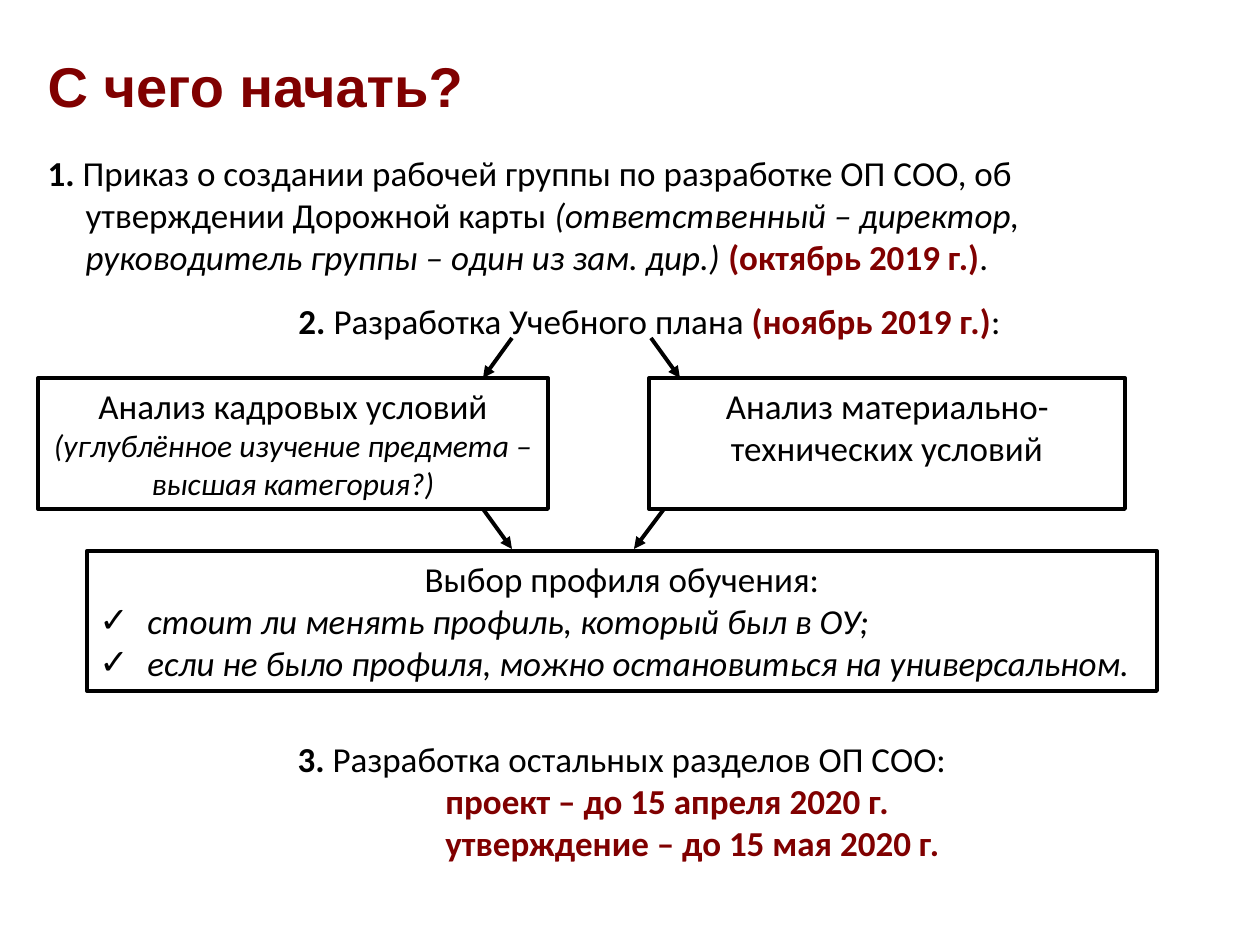
from dataclasses import dataclass

from lxml.etree import SubElement
from pptx import Presentation
from pptx.dml.color import RGBColor
from pptx.enum.shapes import MSO_CONNECTOR as Connector, MSO_SHAPE as Shape
from pptx.enum.text import MSO_ANCHOR as Anchor, MSO_AUTO_SIZE as AutoSize, PP_ALIGN as Align
from pptx.oxml.ns import qn
from pptx.util import Emu, Pt

BLACK = RGBColor(0x00, 0x00, 0x00)
MAROON = RGBColor(0x80, 0x00, 0x00)
PX_PER_INCH = 126


def px(length):
    return Emu(round(length * 914400 / PX_PER_INCH))


@dataclass
class Span:
    text: str
    bold: bool = False
    italic: bool = False
    color: RGBColor = BLACK
    size: int = 20
    font: str = "Calibri"


@dataclass
class Para:
    spans: list
    align: Align = Align.LEFT
    margin: int = 0
    indent: int = 0
    bullet: str = ""
    before: float = 0


@dataclass
class SlideBuilder:
    page: object
    line_color: RGBColor = BLACK
    line_width: float = 2.25

    def fill_text(self, shape, paras):
        frame = shape.text_frame
        frame.word_wrap = True
        frame.auto_size = AutoSize.NONE
        frame.vertical_anchor = Anchor.TOP
        for number, para in enumerate(paras):
            target = frame.add_paragraph() if number else frame.paragraphs[0]
            target.alignment = para.align
            target.space_before = Pt(para.before)
            for span in para.spans:
                run = target.add_run()
                run.text = span.text
                font = run.font
                font.name, font.size = span.font, Pt(span.size)
                font.bold, font.italic = span.bold, span.italic
                font.color.rgb = span.color
            self.set_indent(target, para)

    def set_indent(self, target, para):
        props = target._p.get_or_add_pPr()
        props.set("marL", str(px(para.margin)))
        props.set("indent", str(px(para.indent)))
        if para.bullet:
            SubElement(props, qn("a:buFont"), typeface="Arial")
            SubElement(props, qn("a:buChar"), char=para.bullet)
        else:
            SubElement(props, qn("a:buNone"))

    def placeholder(self, shape, left, top, width, height, paras):
        shape.left, shape.top = px(left), px(top)
        shape.width, shape.height = px(width), px(height)
        self.fill_text(shape, paras)

    def text(self, left, top, width, height, paras):
        box = self.page.shapes.add_textbox(px(left), px(top), px(width), px(height))
        self.fill_text(box, paras)

    def frame(self, left, top, width, height, paras):
        box = self.page.shapes.add_shape(
            Shape.RECTANGLE, px(left), px(top), px(width), px(height))
        box.shadow.inherit = False
        box.fill.background()
        self.style_line(box.line)
        self.fill_text(box, paras)

    def arrow(self, start_x, start_y, end_x, end_y):
        link = self.page.shapes.add_connector(
            Connector.STRAIGHT, px(start_x), px(start_y), px(end_x), px(end_y))
        self.style_line(link.line)
        SubElement(link.line._get_or_add_ln(), qn("a:tailEnd"), type="triangle")
        SubElement(link._element.spPr, qn("a:effectLst"))

    def style_line(self, line):
        line.color.rgb = self.line_color
        line.width = Pt(self.line_width)


def main():
    deck = Presentation()
    deck.slide_width, deck.slide_height = px(1260), px(945)
    page = deck.slides.add_slide(deck.slide_layouts[1])
    builder = SlideBuilder(page)

    builder.placeholder(page.shapes.title, 35, 45, 1201, 81, [
        Para([Span("С чего начать?", bold=True, color=MAROON, size=32, font="Arial")]),
    ])
    builder.placeholder(page.placeholders[1], 35, 145, 1191, 212, [
        Para([
            Span("1. ", bold=True),
            Span("Приказ о создании рабочей группы по разработке ОП СОО, "
                 "об утверждении Дорожной карты "),
            Span("(ответственный – директор, руководитель группы – "
                 "один из зам. дир.) ", italic=True),
            Span("(октябрь 2019 г.)", bold=True, color=MAROON),
            Span("."),
        ], margin=38, indent=-38),
        Para([
            Span("2. ", bold=True),
            Span("Разработка Учебного плана "),
            Span("(ноябрь 2019 г.)", bold=True, color=MAROON),
            Span(":"),
        ], align=Align.CENTER, margin=38, before=12.8),
    ])

    row_top, row_height = 378, 131
    builder.frame(38, row_top, 510, row_height, [
        Para([
            Span("Анализ кадровых условий "),
            Span("(углублённое изучение предмета – высшая категория?)",
                 italic=True, size=18),
        ], align=Align.CENTER),
    ])
    builder.frame(649, row_top, 476, row_height, [
        Para([Span("Анализ материально-технических условий")], align=Align.CENTER),
    ])

    profile_points = [
        "стоит ли менять профиль, который был в ОУ;",
        "если не было профиля, можно остановиться на универсальном.",
    ]
    builder.frame(87, 551, 1070, 140, [
        Para([Span("Выбор профиля обучения:")], align=Align.CENTER),
        *[Para([Span(point, italic=True)], margin=48, indent=-48, bullet="✓")
          for point in profile_points],
    ])

    row_bottom = row_top + row_height
    for start_x, end_x in [(512, 483), (651, 680)]:
        builder.arrow(start_x, row_top - 40, end_x, row_top)
    for start_x, end_x in [(664, 634), (483, 512)]:
        builder.arrow(start_x, row_bottom, end_x, row_bottom + 40)

    deadlines = ["проект – до 15 апреля 2020 г.", "утверждение – до 15 мая 2020 г."]
    builder.text(87, 731, 1070, 140, [
        Para([
            Span("3. ", bold=True),
            Span("Разработка остальных разделов ОП СОО:"),
        ], align=Align.CENTER),
        *[Para([Span(deadline, bold=True, color=MAROON)], margin=346)
          for deadline in deadlines],
    ])

    deck.save("out.pptx")


if __name__ == "__main__":
    main()
